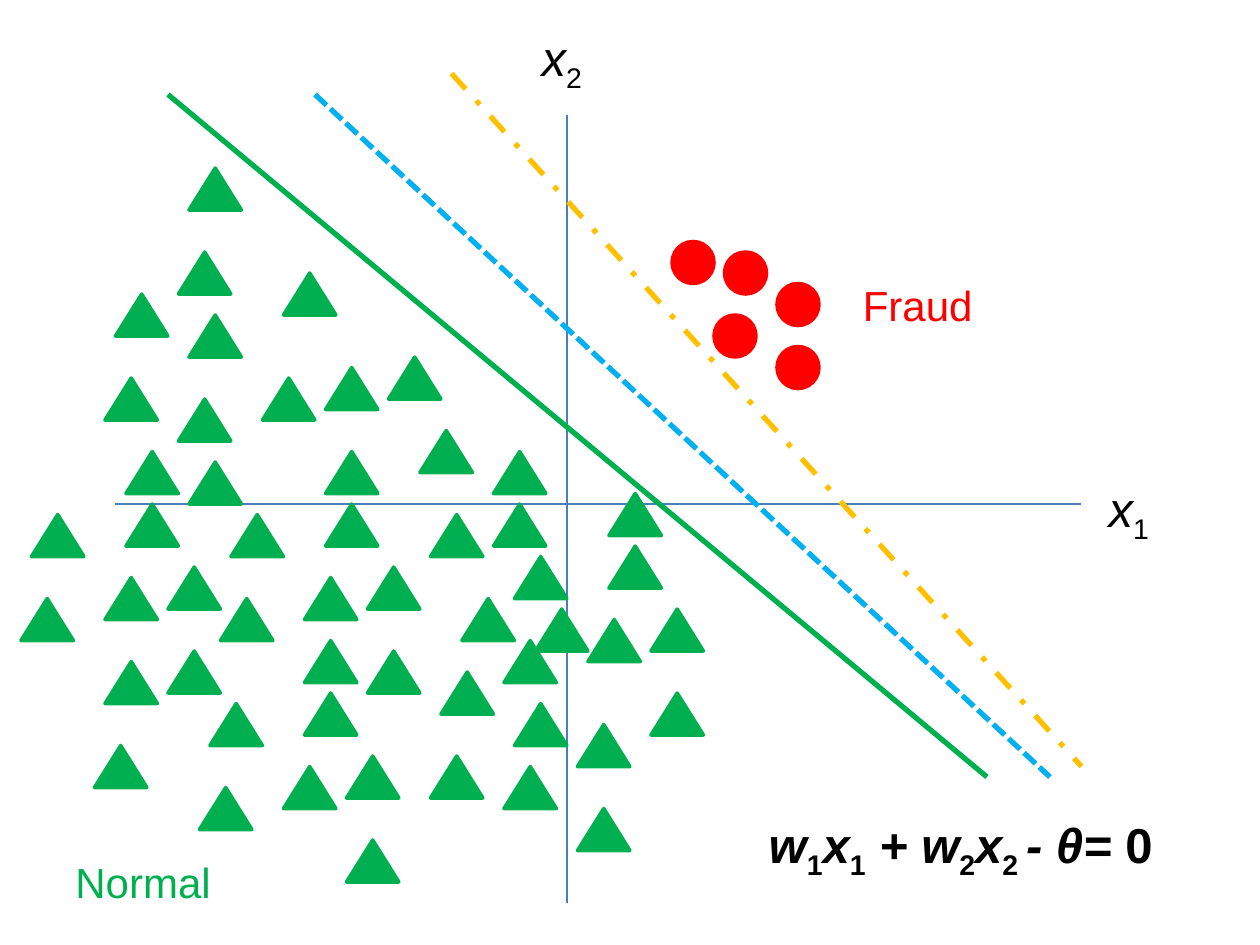
"""Scatter of normal and fraud cases with three linear decision borders."""
from pptx import Presentation
from pptx.dml.color import RGBColor
from pptx.enum.dml import MSO_LINE as Dash
from pptx.enum.shapes import MSO_CONNECTOR as Link, MSO_SHAPE as Form
from pptx.enum.text import MSO_AUTO_SIZE as Fit, PP_ALIGN as Align
from pptx.oxml.ns import qn
from pptx.util import Inches, Pt
from lxml.etree import SubElement

BLACK = RGBColor(0, 0, 0)
RED = RGBColor(0xFF, 0, 0)
GREEN = RGBColor(0, 0xB0, 0x50)
CYAN = RGBColor(0, 0xB0, 0xF0)
AMBER = RGBColor(0xFF, 0xC0, 0)
STEEL = RGBColor(0x4B, 0x7E, 0xBC)

deck = Presentation()
deck.slide_width, deck.slide_height = Inches(10), Inches(7.5)
slide = deck.slides.add_slide(deck.slide_layouts[6])
shapes = slide.shapes
UNIT = deck.slide_width // 120


def draw(ends, color, width, dash=None):
    line = shapes.add_connector(Link.STRAIGHT, *(int(n * UNIT) for n in ends))
    line.line.color.rgb = color
    line.line.width = Pt(width)
    if dash:
        line.line.dash_style = dash
    SubElement(line._element.spPr, qn("a:effectLst"))


def write(place, runs, size, color, bold=None, wrap=True):
    box = shapes.add_textbox(*(int(n * UNIT) for n in place))
    frame = box.text_frame
    frame.word_wrap = wrap
    frame.auto_size = Fit.SHAPE_TO_FIT_TEXT
    para = frame.paragraphs[0]
    if wrap:
        para.alignment = Align.CENTER
    for text, style in runs:
        run = para.add_run()
        run.text = text
        font = run.font
        font.name, font.size, font.bold = "Arial", Pt(size), bold
        font.color.rgb = color
        font.italic = style == "italic"
        if style == "sub":
            run._r.get_or_add_rPr().set("baseline", "-25000")


draw((11, 48, 103, 48), STEEL, 0.75)
draw((54, 11, 54, 86), STEEL, 0.75)

normal = {
    16: [18], 24: [17], 26: [27], 28: [11], 30: [18], 34: [37], 35: [31],
    36: [10, 25], 38: [17], 41: [40], 43: [12, 31, 47], 44: [18], 47: [58],
    48: [12, 31, 47], 49: [3, 22, 41], 52: [58], 53: [49], 54: [16, 35],
    55: [10, 29], 57: [2, 21, 44], 58: [51, 62], 59: [56], 61: [29, 48],
    62: [16, 35], 63: [10], 64: [42], 66: [29, 62], 67: [20, 49], 69: [55],
    71: [9], 72: [33, 41], 73: [27, 48], 75: [19], 77: [55], 80: [33],
}
fraud = {23: [64], 24: [69], 27: [74], 30: [68], 33: [74]}

for group, form, wide, color in (
    (normal, Form.ISOSCELES_TRIANGLE, 5, GREEN),
    (fraud, Form.OVAL, 4, RED),
):
    for row, cols in group.items():
        for col in cols:
            mark = shapes.add_shape(
                form, col * UNIT, row * UNIT, wide * UNIT, 4 * UNIT)
            mark.shadow.inherit = False
            mark.fill.solid()
            mark.fill.fore_color.rgb = color
            mark.line.color.rgb = color
            mark.line.width = Pt(2)

for place, digit in (((104, 45, 7, 6.8), "1"), ((50, 2, 7, 6.8), "2")):
    write(place, [("x", "italic"), (digit, "sub")], 28, BLACK)
write((81, 26, 13, 6), [("Fraud", "")], 24, RED, wrap=False)
write((6, 81, 15.5, 6), [("Normal", "")], 24, GREEN, wrap=False)

rule = [
    ("w", "italic"), ("1", "sub"), ("x", "italic"), ("1", "sub"),
    (" + w", "italic"), ("2", "sub"), ("x", "italic"), ("2 ", "sub"),
    ("- θ= ", "italic"), ("0", ""),
]
write((68, 77, 47, 6.8), rule, 28, BLACK, bold=True)

draw((43, 7, 103, 73), AMBER, 3, Dash.DASH_DOT)
draw((30, 9, 100, 74), CYAN, 3, Dash.SQUARE_DOT)
draw((16, 9, 94, 74), GREEN, 3)
for line in shapes:
    for dash in line._element.iter(qn("a:prstDash")):
        if dash.get("val") == "sysDot":
            dash.set("val", "sysDash")

deck.save("out.pptx")
